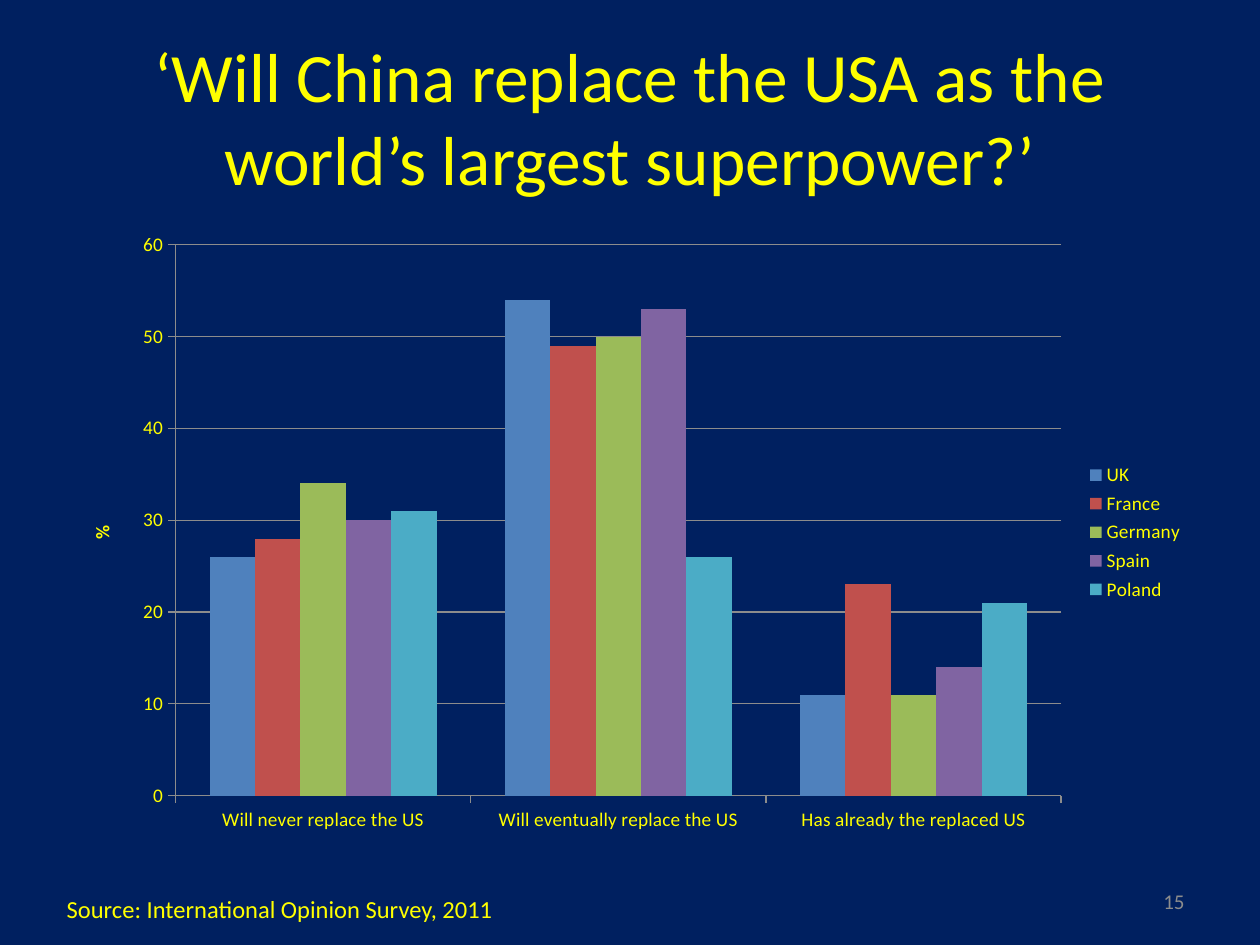
import pptx
import pptx.chart.data
import pptx.dml.color
import pptx.enum.chart
import pptx.enum.text
import pptx.util

Pt = pptx.util.Pt
RGBColor = pptx.dml.color.RGBColor
ALIGN = pptx.enum.text.PP_ALIGN
ANCHOR = pptx.enum.text.MSO_ANCHOR
CHART = pptx.enum.chart

NAVY = RGBColor(0x00, 0x20, 0x60)
YELLOW = RGBColor(0xFF, 0xFF, 0x00)
GREY = RGBColor(0x8C, 0x8C, 0x8C)
BLUE = RGBColor(0x4F, 0x81, 0xBD)
RED = RGBColor(0xC0, 0x50, 0x4D)
GREEN = RGBColor(0x9B, 0xBB, 0x59)
PURPLE = RGBColor(0x80, 0x64, 0xA2)
AQUA = RGBColor(0x4B, 0xAC, 0xC6)

ANSWERS = ["Will never replace the US", "Will eventually replace the US",
           "Has already the replaced US"]
COUNTRIES = [
    ("UK", (26, 54, 11), BLUE),
    ("France", (28, 49, 23), RED),
    ("Germany", (34, 50, 11), GREEN),
    ("Spain", (30, 53, 14), PURPLE),
    ("Poland", (31, 26, 21), AQUA),
]


class Deck:
    """Holds the style and the current slide."""

    font_name = "Calibri"

    def __init__(self, width, height):
        self.prs = pptx.Presentation()
        self.prs.slide_width, self.prs.slide_height = Pt(width), Pt(height)

    def slide(self, color):
        self.s = self.prs.slides.add_slide(self.prs.slide_layouts[6])
        fill = self.s.background.fill
        fill.solid()
        fill.fore_color.rgb = color

    def style(self, font, size, color=YELLOW, bold=False):
        for name, value in {"name": self.font_name, "size": Pt(size),
                            "bold": bold}.items():
            setattr(font, name, value)
        font.color.rgb = color

    def text(self, box, text, size, color=YELLOW, align=ALIGN.LEFT,
             anchor=ANCHOR.TOP, wrap=True):
        sp = self.s.shapes.add_textbox(*map(Pt, box))
        tf = sp.text_frame
        tf.word_wrap, tf.vertical_anchor = wrap, anchor
        p = tf.paragraphs[0]
        p.alignment = align
        r = p.add_run()
        r.text = text
        self.style(r.font, size, color)

    def column_chart(self, box, categories, series, unit, size):
        data = pptx.chart.data.CategoryChartData()
        data.categories = categories
        for name, values, _ in series:
            data.add_series(name, values)
        chart = self.s.shapes.add_chart(
            CHART.XL_CHART_TYPE.COLUMN_CLUSTERED, *map(Pt, box), data).chart
        self.style(chart.font, size)
        chart.has_title = False

        # Columns
        plot = chart.plots[0]
        plot.gap_width, plot.vary_by_categories = 150, False
        for columns, (_, _, color) in zip(plot.series, series):
            columns.format.fill.solid()
            columns.format.fill.fore_color.rgb = color

        # Axes
        value_axis = chart.value_axis
        for name, value in {"minimum_scale": 0, "maximum_scale": 60,
                            "major_unit": 10,
                            "has_major_gridlines": True}.items():
            setattr(value_axis, name, value)
        lines = [value_axis.major_gridlines.format.line]
        for axis in (chart.category_axis, value_axis):
            axis.major_tick_mark = CHART.XL_TICK_MARK.OUTSIDE
            self.style(axis.tick_labels.font, size)
            lines.append(axis.format.line)
        for line in lines:
            line.color.rgb, line.width = GREY, Pt(0.75)
        r = value_axis.axis_title.text_frame.paragraphs[0].add_run()
        r.text = unit
        self.style(r.font, size, bold=True)

        # Legend
        chart.has_legend = True
        chart.legend.position = CHART.XL_LEGEND_POSITION.RIGHT
        chart.legend.include_in_layout = False
        self.style(chart.legend.font, size)


def main():
    deck = Deck(720, 540)
    deck.slide(NAVY)

    # Title
    deck.text((36, 21.6, 648, 90),
              "‘Will China replace the USA as the world’s largest superpower?’",
              39.6, align=ALIGN.CENTER, anchor=ANCHOR.MIDDLE)

    # Survey results
    deck.column_chart((36, 126, 648, 356.4), ANSWERS, COUNTRIES, "%", 11)

    # Source and page number
    deck.text((31, 507.6, 260.6, 24.5),
              "Source: International Opinion Survey, 2011", 14, wrap=False)
    deck.text((516, 500.5, 168, 28.75), "15", 12, GREY, ALIGN.RIGHT,
              ANCHOR.MIDDLE)

    deck.prs.save("out.pptx")


if __name__ == "__main__":
    main()
